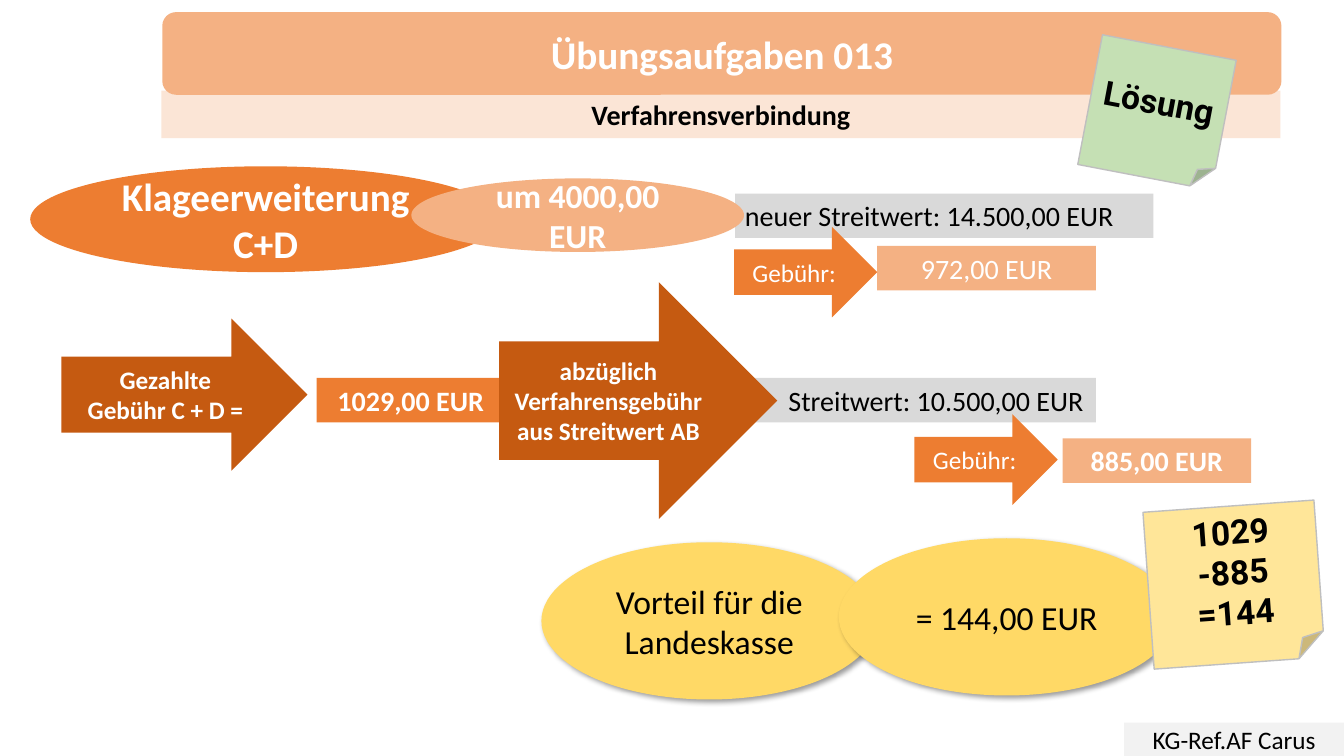
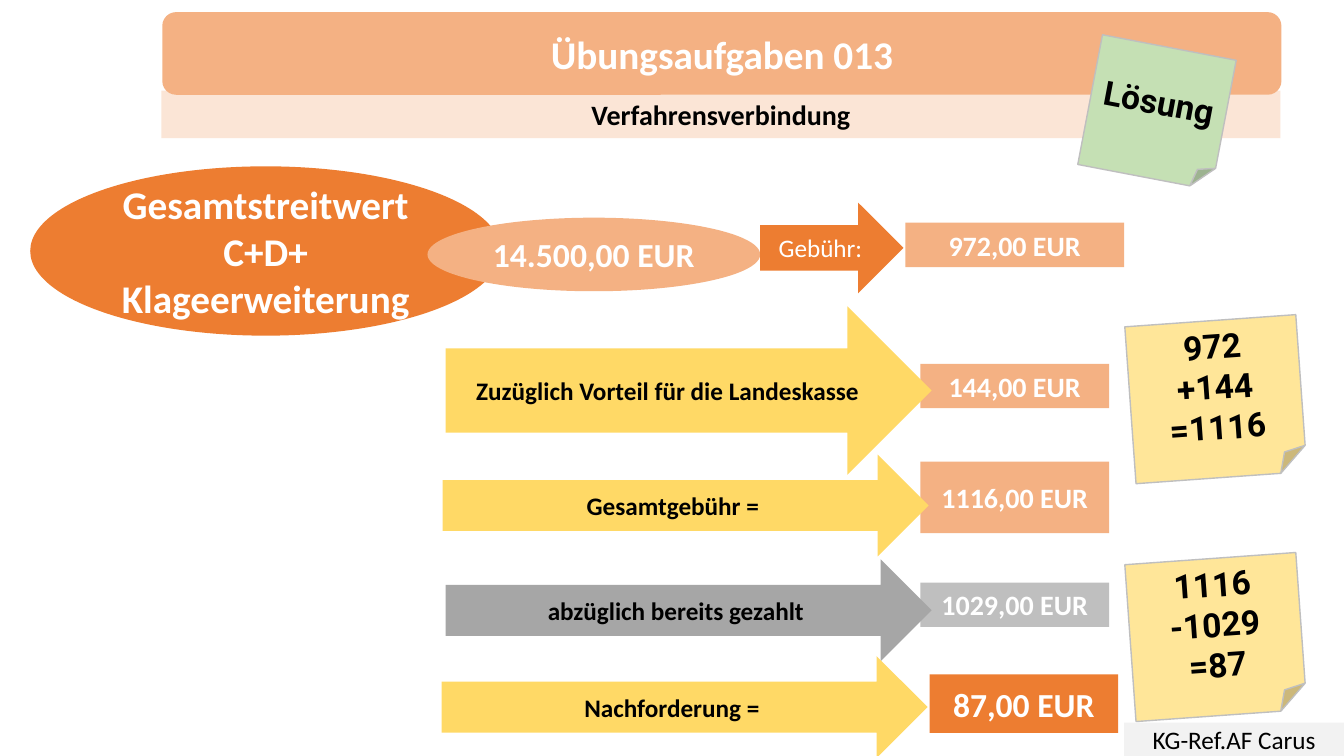
from dataclasses import dataclass
from lxml import etree
from pptx import Presentation, util as u
from pptx.dml.color import RGBColor
from pptx.enum import shapes, text
from pptx.oxml.ns import qn


@dataclass(frozen=True)
class Theme:
    body_font: str = "Calibri"
    note_font: str = "Roboto"
    white: str = "FFFFFF"
    black: str = "000000"
    orange: str = "ED7D31"
    apricot: str = "F4B183"
    peach: str = "FBE5D6"
    rust: str = "C55A11"
    yellow: str = "FFD966"
    pale_yellow: str = "FFE699"
    green: str = "C5E0B4"
    footer_gray: str = "F2F2F2"
    light_gray: str = "D9D9D9"
    mid_gray: str = "BFBFBF"
    dark_gray: str = "A6A6A6"
    title: int = 28
    large: int = 24
    medium: int = 20
    small: int = 18


T = Theme()
KIND = shapes.MSO_SHAPE
RECT, ARROW, OVAL = KIND.RECTANGLE, KIND.RIGHT_ARROW, KIND.FLOWCHART_CONNECTOR

# Named looks: preset, fill and text format
NOTE = dict(preset=KIND.FOLDED_CORNER, font=T.note_font, color=T.black,
            size=T.large, line=T.mid_gray)
STYLES = {
    "band": dict(preset=KIND.ROUNDED_RECTANGLE, fill=T.apricot),
    "subtitle": dict(preset=RECT, fill=T.peach, color=T.black),
    "footer": dict(preset=RECT, fill=T.footer_gray, color=T.black, size=T.small, bold=False),
    "solution": dict(NOTE, fill=T.green, rotation=10.8),
    "sum": dict(NOTE, fill=T.pale_yellow, rotation=-4.1),
    "topic": dict(preset=OVAL, fill=T.orange, size=T.title),
    "claim": dict(preset=OVAL, fill=T.apricot, size=T.large),
    "value": dict(preset=RECT, fill=T.light_gray, color=T.black, bold=False,
                  align=text.PP_ALIGN.LEFT),
    "amount": dict(preset=RECT, fill=T.apricot),
    "fee": dict(preset=ARROW, fill=T.orange, size=T.small, bold=False),
    "paid": dict(preset=ARROW, fill=T.rust, size=T.small),
    "step": dict(preset=ARROW, fill=T.yellow, color=T.black, size=T.small),
    "benefit": dict(preset=KIND.OVAL, fill=T.yellow, color=T.black, size=T.large,
                    bold=False, shadow=True),
}

# Repeated sizes
AMOUNT, WIDE_AMOUNT, VALUE = (1.87, 0.44), (2.17, 0.44), (4.15, 0.44)
FEE, CLAIM, BENEFIT, SUM = (1.42, 0.9), (3.3, 0.73), (3.33, 1.56), (1.7, 1.56)

TITLE = "Übungsaufgaben 013"
TITLE_BOX = ((1.61, 0.12), (11.1, 0.82))

# Each part: style, words, (left, top), (width, height), changes to the style
HEADER = [
    ("subtitle", "Verfahrensverbindung", (1.6, 0.9), (11.1, 0.47), {}),
    ("footer", "KG-Ref.AF Carus", (11.15, 7.17), (2.18, 0.33), {}),
    ("band", "", *TITLE_BOX, {}),
]
SOLUTION = ("solution", "Lösung", (10.8, 0.46), (1.35, 1.31), {})

BENEFIT_PARTS = [
    ("amount", "1029,00 EUR", (3.14, 3.75), AMOUNT, dict(fill=T.orange)),
    ("amount", "885,00 EUR", (10.54, 4.35), AMOUNT, {}),
    ("amount", "972,00 EUR", (8.7, 2.44), WIDE_AMOUNT, dict(bold=False)),
    ("value", "Streitwert: 10.500,00 EUR", (6.72, 3.75), VALUE, dict(indent=1.1)),
    ("value", "neuer Streitwert: 14.500,00 EUR", (7.29, 1.92), VALUE, {}),
    ("topic", "Klageerweiterung C+D", (0.3, 1.65), (4.67, 1.05), {}),
    ("claim", "um 4000,00 EUR", (4.08, 1.77), CLAIM, {}),
    ("fee", "Gebühr:", (7.28, 2.25), FEE, {}),
    ("paid", "abzüglich Verfahrensgebühr aus Streitwert AB", (4.95, 2.8), (2.76, 2.35), {}),
    ("fee", "Gebühr:", (9.07, 4.11), FEE, {}),
    ("paid", "Gezahlte\nGebühr C + D =", (0.61, 3.16), (2.44, 1.51), {}),
    ("benefit", "Vorteil für die Landeskasse", (5.37, 5.38), BENEFIT, {}),
    ("benefit", "= 144,00 EUR", (8.32, 5.34), BENEFIT, {}),
    ("sum", "1029\n-885\n=144", (11.39, 5.02), SUM, {}),
]

STEP_WIDTH = 4.82
CLAIM_PARTS = [
    ("amount", "972,00 EUR", (8.98, 2.21), WIDE_AMOUNT, {}),
    ("topic", "Gesamtstreitwert C+D+ Klageerweiterung", (0.3, 1.65), (4.67, 1.68), {}),
    ("claim", "14.500,00 EUR", (4.24, 2.16), CLAIM, {}),
    ("fee", "Gebühr:", (7.54, 2.01), FEE, {}),
    ("amount", "144,00 EUR", (9.13, 3.61), AMOUNT, {}),
    ("step", "Zuzüglich Vorteil für die Landeskasse", (4.42, 3.04), (STEP_WIDTH, 1.67), {}),
    ("amount", "1116,00 EUR", (9.13, 4.58), (1.87, 0.71), {}),
    ("step", "Gesamtgebühr =", (4.39, 4.51), (STEP_WIDTH, 1.01), {}),
    ("amount", "1029,00 EUR", (9.13, 5.78), AMOUNT, dict(fill=T.mid_gray)),
    ("step", "abzüglich bereits gezahlt", (4.42, 5.55), (STEP_WIDTH, 1.01),
     dict(fill=T.dark_gray)),
    ("step", "Nachforderung =", (4.38, 6.51), (STEP_WIDTH, 1.01), {}),
    ("amount", "87,00 EUR", (9.22, 6.69), (1.87, 0.58), dict(fill=T.orange, size=T.large)),
    ("sum", "972\n+144\n=1116", (11.21, 3.18), SUM, {}),
    ("sum", "1116\n-1029\n=87", (11.21, 5.54), SUM, {}),
]


def write(shape, words, *, size=T.medium, color=T.white, bold=True, font=T.body_font,
          align=text.PP_ALIGN.CENTER, indent=0.1):
    frame = shape.text_frame
    frame.word_wrap = True
    frame.vertical_anchor = text.MSO_ANCHOR.MIDDLE
    frame.margin_left = u.Inches(indent)
    frame.margin_right = u.Inches(0.1)
    frame.margin_top = frame.margin_bottom = u.Inches(0.05)
    frame.text = words
    for paragraph in frame.paragraphs:
        paragraph.alignment = align
        for run in paragraph.runs:
            run.font.name = font
            run.font.size = u.Pt(size)
            run.font.bold = bold
            run.font.color.rgb = RGBColor.from_string(color)


def cast_shadow(shape):
    effects = shape.element.spPr.find(qn("a:effectLst"))
    outer = etree.SubElement(effects, qn("a:outerShdw"), blurRad=str(u.Pt(4)),
                             dist=str(u.Pt(3)), dir=str(45 * 60000), rotWithShape="0")
    tint = etree.SubElement(outer, qn("a:srgbClr"), val=T.black)
    etree.SubElement(tint, qn("a:alpha"), val="40000")


def add_part(slide, style, words, position, extent, changes):
    look = {**STYLES[style], **changes}
    preset, fill = look.pop("preset"), look.pop("fill")
    line, shadow = look.pop("line", None), look.pop("shadow", False)
    shape = slide.shapes.add_shape(preset, *map(u.Inches, position + extent))
    shape.rotation = look.pop("rotation", 0)
    shape.shadow.inherit = False
    shape.fill.solid()
    shape.fill.fore_color.rgb = RGBColor.from_string(fill)
    if line:
        shape.line.color.rgb = RGBColor.from_string(line)
        shape.line.width = u.Pt(1)
    else:
        shape.line.fill.background()
    if shadow:
        cast_shadow(shape)
    if words:
        write(shape, words, **look)


def place_title(slide):
    """Lay the title placeholder over the band drawn before it."""
    title = slide.shapes.title
    (left, top), (width, height) = TITLE_BOX
    title.left, title.top = u.Inches(left), u.Inches(top)
    title.width, title.height = u.Inches(width), u.Inches(height)
    write(title, TITLE, size=T.title)
    title.element.getparent().append(title.element)


def main():
    deck = Presentation()
    deck.slide_width, deck.slide_height = u.Inches(13.33), u.Inches(7.5)
    title_only = deck.slide_layouts[5]
    for parts in (BENEFIT_PARTS, CLAIM_PARTS):
        slide = deck.slides.add_slide(title_only)
        for part in HEADER:
            add_part(slide, *part)
        place_title(slide)
        for part in [SOLUTION, *parts]:
            add_part(slide, *part)
    deck.save("out.pptx")


if __name__ == "__main__":
    main()
